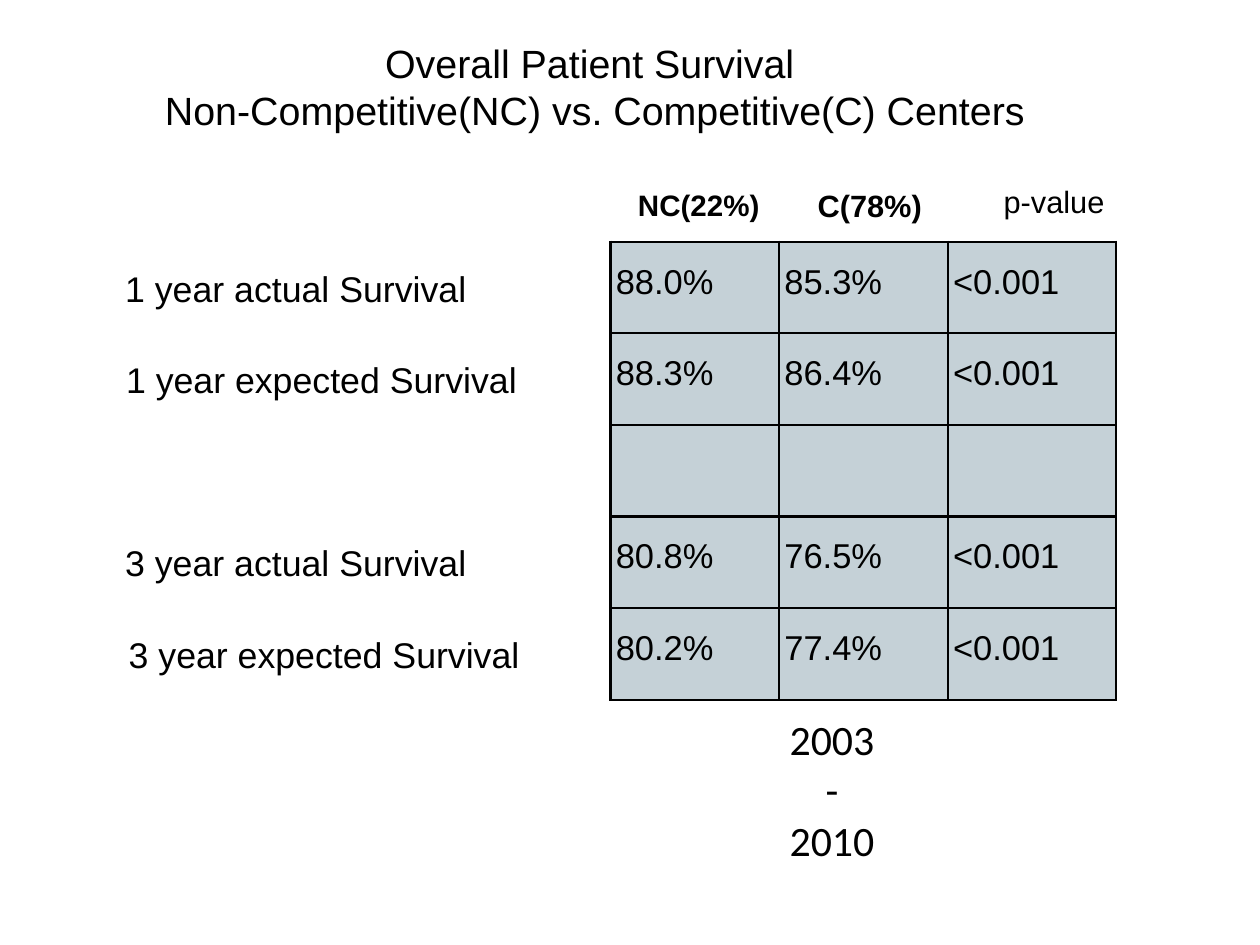
from dataclasses import dataclass

from lxml import etree
from pptx import Presentation
from pptx import util as u
from pptx.dml.color import RGBColor
from pptx.enum import text
from pptx.oxml.ns import qn

EMU_PER_PX = 9144  # 100 px to the inch
COLORS = {"ink": "000000", "cell": "C5D1D7", "page": "FFFFFF"}
BORDER_PT = 2
CELL_INSET = 6

TABLE_LEFT, TABLE_TOP, TABLE_WIDTH, TABLE_HEIGHT = 689, 273, 571, 517
LABEL_DROP = 30  # from the top of a table row to the top of its label


@dataclass(frozen=True)
class SurvivalRow:
    label: str
    label_left: int
    values: tuple[str, str, str]


@dataclass(frozen=True)
class Caption:
    lines: tuple[str, ...]
    left: int
    top: int
    width: int
    height: int
    size: int
    font: str = "Arial"
    bold: bool = False
    wrap: bool = True
    right_inset: int = 0


SURVIVAL_ROWS = (
    SurvivalRow("1 year actual Survival", 3, ("88.0%", "85.3%", "<0.001")),
    SurvivalRow("1 year expected Survival", 32, ("88.3%", "86.4%", "<0.001")),
    SurvivalRow("", 0, ("", "", "")),
    SurvivalRow("3 year actual Survival", 3, ("80.8%", "76.5%", "<0.001")),
    SurvivalRow("3 year expected Survival", 35, ("80.2%", "77.4%", "<0.001")),
)

HEADINGS = (
    Caption(("NC(22%)",), 719, 212, 139, 38, 24, bold=True, wrap=False),
    Caption(("C(78%)",), 922, 212, 119, 39, 25, bold=True, wrap=False),
    Caption(("p-value",), 1132, 208, 115, 39, 25, wrap=False),
)
TITLE = Caption(
    ("Overall Patient Survival ", "Non-Competitive(NC) vs. Competitive(C) Centers"),
    42, 47, 1260, 101, 32,
)
# The right inset leaves room for one year per line.
PERIOD = Caption(("2003-2010",), 884, 864, 206, 54, 34, font="Calibri", right_inset=96)


def px(length: int) -> u.Emu:
    return u.Emu(length * EMU_PER_PX)


def color(name: str) -> RGBColor:
    return RGBColor.from_string(COLORS[name])


def add_run(paragraph, words: str, size: int, font: str = "Arial", bold: bool = False) -> None:
    run = paragraph.add_run()
    run.text = words
    run.font.name = font
    run.font.size = u.Pt(size)
    run.font.bold = bold
    run.font.color.rgb = color("ink")


def add_caption(slide, caption: Caption) -> None:
    box = slide.shapes.add_textbox(
        px(caption.left), px(caption.top), px(caption.width), px(caption.height)
    )
    frame = box.text_frame
    frame.word_wrap = caption.wrap
    frame.vertical_anchor = text.MSO_ANCHOR.MIDDLE
    frame.margin_left = frame.margin_top = frame.margin_bottom = 0
    frame.margin_right = px(caption.right_inset)
    for index, line in enumerate(caption.lines):
        paragraph = frame.add_paragraph() if index else frame.paragraphs[0]
        paragraph.alignment = text.PP_ALIGN.CENTER
        add_run(paragraph, line, caption.size, caption.font, caption.bold)


def add_borders(cell) -> None:
    """Rule all four sides; the lines must come before the cell's fill."""
    properties = cell._tc.get_or_add_tcPr()
    for position, side in enumerate(("a:lnL", "a:lnR", "a:lnT", "a:lnB")):
        line = etree.Element(qn(side), w=str(u.Pt(BORDER_PT)))
        fill = etree.SubElement(line, qn("a:solidFill"))
        etree.SubElement(fill, qn("a:srgbClr"), val=COLORS["ink"])
        properties.insert(position, line)


def fill_cell(cell, value: str) -> None:
    cell.fill.solid()
    cell.fill.fore_color.rgb = color("cell")
    add_borders(cell)
    cell.vertical_anchor = text.MSO_ANCHOR.MIDDLE
    cell.margin_left = cell.margin_right = px(CELL_INSET)
    cell.margin_top = cell.margin_bottom = px(CELL_INSET)
    if value:
        paragraph = cell.text_frame.paragraphs[0]
        paragraph.line_spacing = 0.58
        add_run(paragraph, value, 28)


def add_survival_table(slide) -> None:
    table = slide.shapes.add_table(
        len(SURVIVAL_ROWS), len(HEADINGS),
        px(TABLE_LEFT), px(TABLE_TOP), px(TABLE_WIDTH), px(TABLE_HEIGHT),
    ).table
    table.first_row = table.horz_banding = False
    for row_index, row in enumerate(SURVIVAL_ROWS):
        for column_index, value in enumerate(row.values):
            fill_cell(table.cell(row_index, column_index), value)


def add_row_labels(slide) -> None:
    for index, row in enumerate(SURVIVAL_ROWS):
        if row.label:
            row_top = TABLE_TOP + round(TABLE_HEIGHT * index / len(SURVIVAL_ROWS))
            add_caption(
                slide,
                Caption((row.label,), row.label_left, row_top + LABEL_DROP, 662, 44, 29),
            )


def main() -> None:
    deck = Presentation()
    deck.slide_width, deck.slide_height = px(1422), px(1067)
    slide = deck.slides.add_slide(deck.slide_layouts[6])
    slide.background.fill.solid()
    slide.background.fill.fore_color.rgb = color("page")

    add_survival_table(slide)
    for heading in HEADINGS:
        add_caption(slide, heading)
    add_row_labels(slide)
    add_caption(slide, TITLE)
    add_caption(slide, PERIOD)
    deck.save("out.pptx")


if __name__ == "__main__":
    main()
